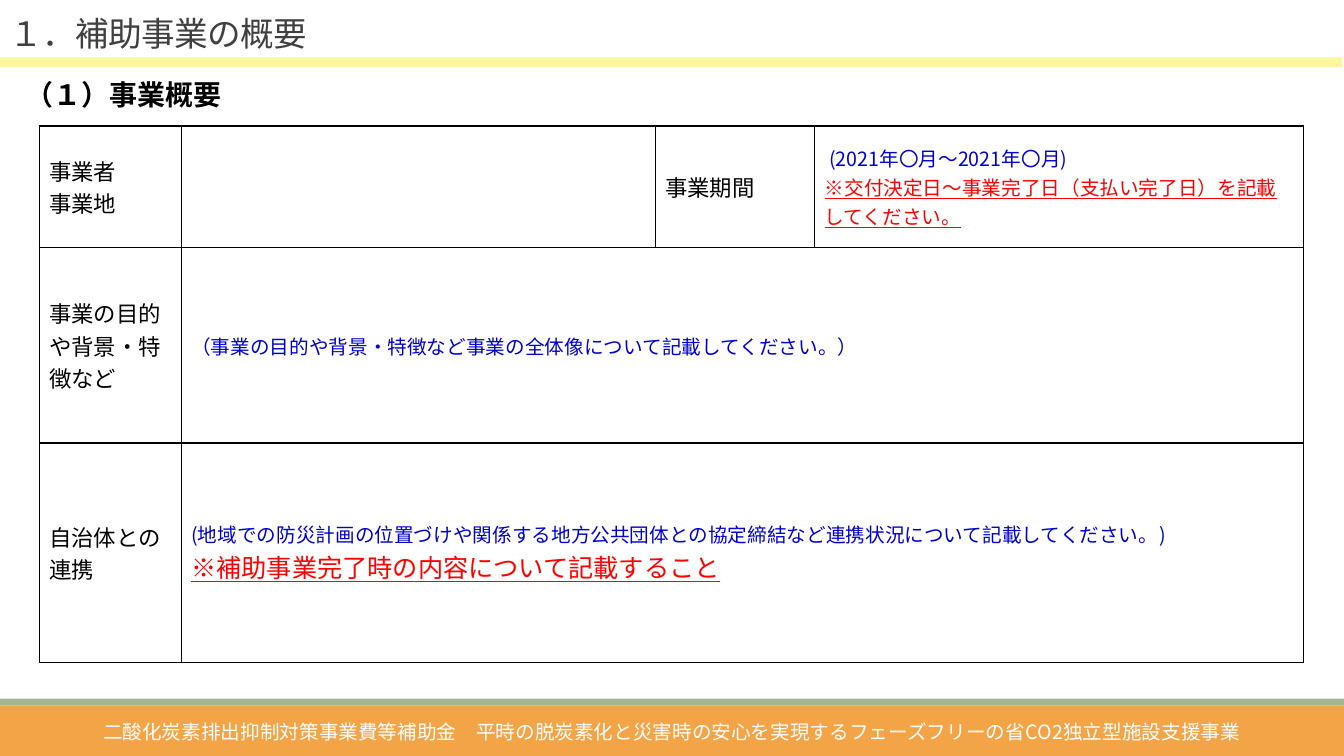
from lxml.etree import SubElement
from pptx import Presentation
from pptx.dml.color import RGBColor
from pptx.enum.shapes import MSO_SHAPE
from pptx.enum.text import MSO_ANCHOR, PP_ALIGN
from pptx.oxml.ns import qn
from pptx.util import Pt

# Content: each paragraph is (text, size, colour, style)
FONT = "Noto Sans CJK JP"
BLACK, BLUE, RED = "000000", "0000CC", "FF0000"
TITLE = ("１．補助事業の概要", 24, "404040", "tight")
HEADING = ("（１）事業概要", 20, BLACK, "bold")
PROGRAMME = ("二酸化炭素排出抑制対策事業費等補助金　平時の脱炭素化と災害時の安心を実現する"
             "フェーズフリーの省CO2独立型施設支援事業", 14, "FFFFFF", "")

# Bands: left, top, width, height, colour
BANDS = [
    (0, 504, 960, 36, "F3A447"),
    (0, 499, 960, 5, "A5B592"),
    (0, 41, 958.5, 7, "FDF69C"),
]

COLUMN_WIDTHS = [101.5, 338.5, 114, 349]
ROW_HEIGHTS = [87, 139.5, 156.5]
# A row with two entries spans its last entry to the right edge
OVERVIEW = [
    [
        [("事業者", 16, BLACK, ""), ("事業地", 16, BLACK, "")],
        [],
        [("事業期間", 16, BLACK, "")],
        [(" (2021年〇月～2021年〇月)", 14, BLUE, ""),
         ("※交付決定日～事業完了日（支払い完了日）を記載してください。", 14, RED, "underline")],
    ],
    [
        [("事業の目的や背景・特徴など", 16, BLACK, "")],
        [("（事業の目的や背景・特徴など事業の全体像について記載してください。）", 14, BLUE, "")],
    ],
    [
        [("自治体との連携", 16, BLACK, "")],
        [("(地域での防災計画の位置づけや関係する地方公共団体との協定締結など"
          "連携状況について記載してください。)", 14, BLUE, ""),
         ("※補助事業完了時の内容について記載すること", 18, RED, "underline")],
    ],
]


def colour(hex_code):
    return RGBColor.from_string(hex_code)


def write(frame, paragraphs):
    for index, (text, size, hex_code, style) in enumerate(paragraphs):
        paragraph = frame.add_paragraph() if index else frame.paragraphs[0]
        run = paragraph.add_run()
        run.text = text
        font = run.font
        font.size = Pt(size)
        font.name = FONT
        font.color.rgb = colour(hex_code)
        font.bold = style == "bold"
        font.underline = style == "underline"
        properties = run._r.get_or_add_rPr()
        SubElement(properties, qn("a:ea"), typeface=FONT)
        if style == "tight":
            properties.set("spc", "-50")


def add_text(slide, left, top, width, height, line):
    frame = slide.shapes.add_textbox(Pt(left), Pt(top), Pt(width), Pt(height)).text_frame
    frame.word_wrap = True
    write(frame, [line])
    return frame


def draw_borders(cell):
    properties = cell._tc.get_or_add_tcPr()
    for side in ("lnL", "lnR", "lnT", "lnB"):
        border = SubElement(properties, qn(f"a:{side}"), w=str(Pt(1)))
        fill = SubElement(border, qn("a:solidFill"))
        SubElement(fill, qn("a:srgbClr"), val=BLACK)


def add_overview(slide):
    table = slide.shapes.add_table(
        len(ROW_HEIGHTS), len(COLUMN_WIDTHS), Pt(28), Pt(90),
        Pt(sum(COLUMN_WIDTHS)), Pt(sum(ROW_HEIGHTS))).table
    table.first_row = table.horz_banding = False
    for column, width in zip(table.columns, COLUMN_WIDTHS):
        column.width = Pt(width)
    for row, height in zip(table.rows, ROW_HEIGHTS):
        row.height = Pt(height)
    for cell in table.iter_cells():
        draw_borders(cell)
        cell.fill.background()
        cell.vertical_anchor = MSO_ANCHOR.MIDDLE
    last = len(COLUMN_WIDTHS) - 1
    for row, entries in enumerate(OVERVIEW):
        if len(entries) == 2:
            table.cell(row, 1).merge(table.cell(row, last))
        for column, paragraphs in enumerate(entries):
            write(table.cell(row, column).text_frame, paragraphs)


def main():
    presentation = Presentation()
    presentation.slide_width, presentation.slide_height = Pt(960), Pt(540)
    slide = presentation.slides.add_slide(presentation.slide_layouts[6])

    # Coloured bands
    for left, top, width, height, hex_code in BANDS:
        band = slide.shapes.add_shape(
            MSO_SHAPE.RECTANGLE, Pt(left), Pt(top), Pt(width), Pt(height))
        band.shadow.inherit = False
        band.fill.solid()
        band.fill.fore_color.rgb = colour(hex_code)
        band.line.fill.background()

    # Title, heading and programme name
    title = add_text(slide, 0, 2, 248, 39.5, TITLE)
    title.vertical_anchor = MSO_ANCHOR.BOTTOM
    title.paragraphs[0].line_spacing = 0.85
    add_text(slide, 11, 52, 389, 31.5, HEADING)
    programme = add_text(slide, 15, 510.5, 929.5, 26.5, PROGRAMME)
    programme.paragraphs[0].alignment = PP_ALIGN.CENTER

    # Project overview
    add_overview(slide)
    presentation.save("out.pptx")


if __name__ == "__main__":
    main()
